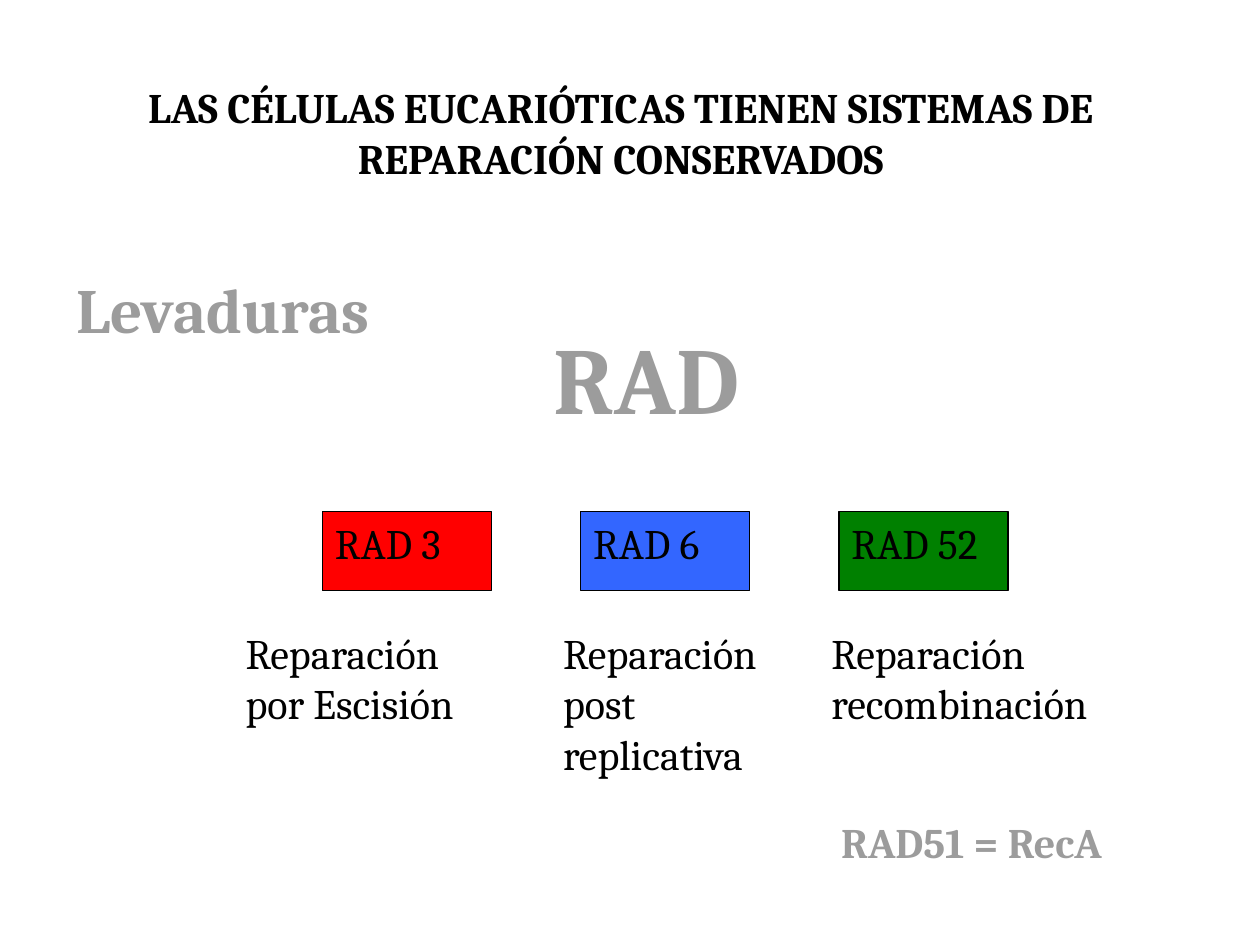
import pptx
import pptx.util
import pptx.dml.color
import pptx.enum.shapes
import pptx.enum.text

PX = 9144  # EMU per px, 100 px to the inch
LEFT = pptx.enum.text.PP_ALIGN.LEFT
CENTER = pptx.enum.text.PP_ALIGN.CENTER
BLACK, GRAY = "000000", "9C9C9C"


def rgb(color):
    return pptx.dml.color.RGBColor.from_string(color)


def write(sp, text, size=24, color=BLACK, bold=False, align=LEFT, wrap=True):
    tf = sp.text_frame
    tf.text = text
    tf.word_wrap = wrap
    tf.auto_size = pptx.enum.text.MSO_AUTO_SIZE.NONE
    tf.vertical_anchor = pptx.enum.text.MSO_ANCHOR.TOP
    p = tf.paragraphs[0]
    p.alignment = align
    font = p.runs[0].font
    font.name = "Cambria"
    font.size = pptx.util.Pt(size)
    font.bold = bold
    font.color.rgb = rgb(color)


prs = pptx.Presentation()
prs.slide_width, prs.slide_height = 1000 * PX, 750 * PX
s = prs.slides.add_slide(prs.slide_layouts[5])

# Title
title = s.shapes.title
title.left, title.top, title.width, title.height = 28 * PX, 60 * PX, 929 * PX, 91 * PX
write(title, "LAS CÉLULAS EUCARIÓTICAS TIENEN SISTEMAS DE REPARACIÓN CONSERVADOS",
      bold=True, align=CENTER)

# Gray headings
headings = [
    ("Levaduras", 51, 210, 276, 71, 36, LEFT, True),
    ("RAD", 421, 249, 184, 101, 54, CENTER, False),
    ("RAD51 = RecA", 650, 643, 242, 50, 24, CENTER, False),
]
for text, x, y, w, h, size, align, wrap in headings:
    sp = s.shapes.add_textbox(x * PX, y * PX, w * PX, h * PX)
    write(sp, text, size, GRAY, True, align, wrap)

# Gene boxes, evenly spaced, each with its repair system below
genes = [
    ("RAD 3", "FF0000", "Reparación por Escisión", 185, 205, 91),
    ("RAD 6", "3366FF", "Reparación post replicativa", 437, 181, 131),
    ("RAD 52", "008000", "Reparación recombinación", 650, 236, 91),
]
for i, (gene, fill, repair, x, w, h) in enumerate(genes):
    sp = s.shapes.add_shape(pptx.enum.shapes.MSO_SHAPE.RECTANGLE,
                            (256 + 205 * i) * PX, 406 * PX, 134 * PX, 63 * PX)
    sp.shadow.inherit = False
    sp.fill.solid()
    sp.fill.fore_color.rgb = rgb(fill)
    sp.line.color.rgb = rgb(BLACK)
    sp.line.width = pptx.util.Pt(0.75)
    write(sp, gene)

    label = s.shapes.add_textbox(x * PX, 493 * PX, w * PX, h * PX)
    write(label, repair)

prs.save("out.pptx")
